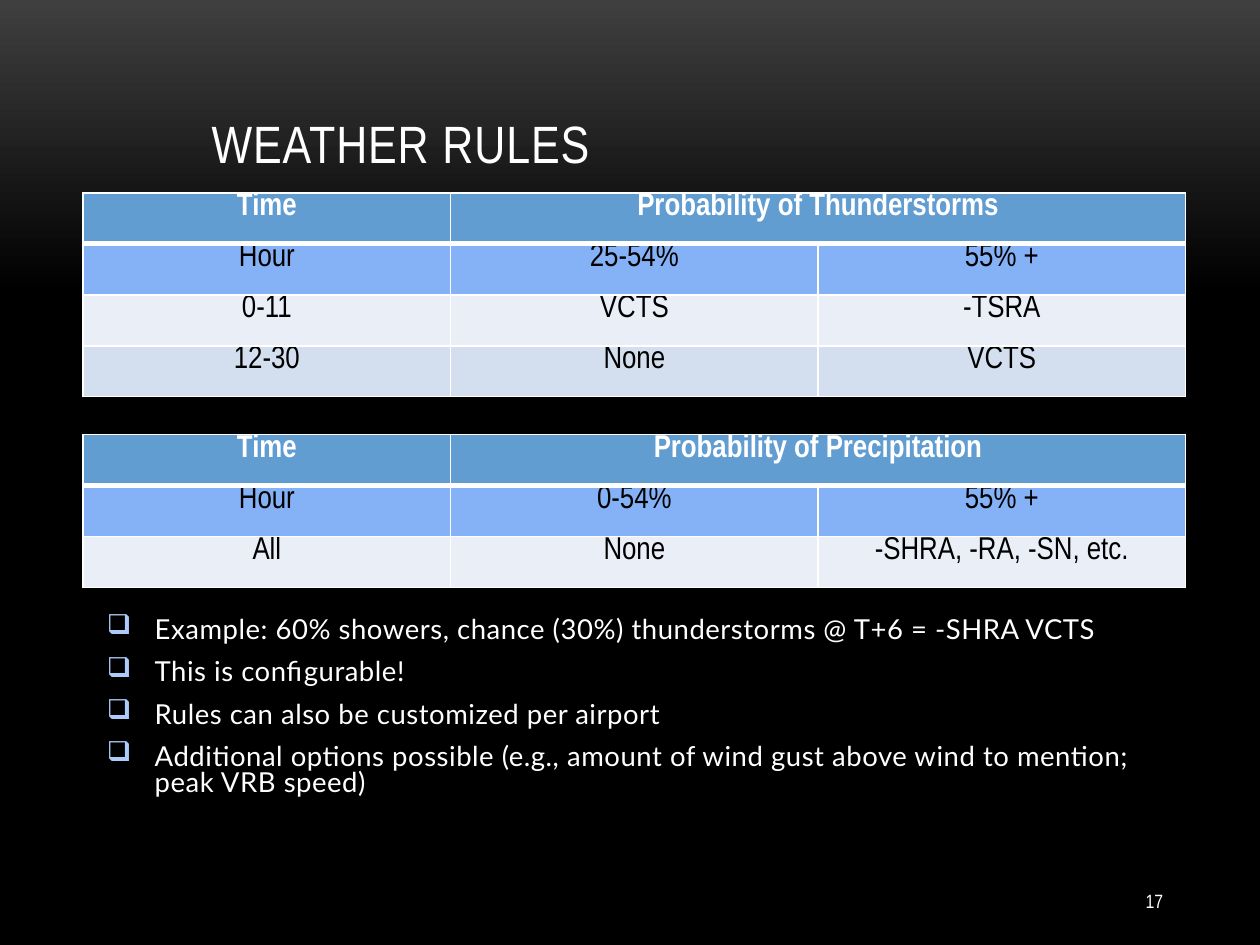
import pptx
import pptx.util
import pptx.dml.color
import pptx.enum.text
import pptx.oxml.ns
from lxml import etree

Inches = pptx.util.Inches
Pt = pptx.util.Pt
ALIGN = pptx.enum.text.PP_ALIGN
ANCHOR = pptx.enum.text.MSO_ANCHOR
FONT = "Arial Narrow"
COLORS = {
    "white": "FFFFFF", "black": "000000", "top": "3F3F3F", "head": "629DD1",
    "hour": "85B2F6", "light": "EAEFF7", "dark": "D3DFEE", "bullet": "ACCBF9",
}
BANDS = ["head", "hour", "light", "dark"]
STORMS = [
    ["Time", "Probability of Thunderstorms", ""],
    ["Hour", "25-54%", "55% +"],
    ["0-11", "VCTS", "-TSRA"],
    ["12-30", "None", "VCTS"],
]
PRECIP = [
    ["Time", "Probability of Precipitation", ""],
    ["Hour", "0-54%", "55% +"],
    ["All", "None", "-SHRA, -RA, -SN, etc."],
]
NOTES = [
    "Example: 60% showers, chance (30%) thunderstorms @ T+6 = -SHRA VCTS",
    "This is configurable!",
    "Rules can also be customized per airport",
    "Additional options possible (e.g., amount of wind gust above wind to mention; "
    "peak VRB speed)",
]


def color(name):
    return pptx.dml.color.RGBColor.from_string(COLORS[name])


def add_tag(parent, tag, **attrs):
    return etree.SubElement(parent, pptx.oxml.ns.qn(tag), attrs)


def style(para, size, font=FONT, shade="white", bold=False, gap=0):
    for run in para.runs:
        run.font.size = Pt(size)
        run.font.name = font
        run.font.bold = bold
        run.font.color.rgb = color(shade)
        if gap:
            run.font._element.set("spc", str(gap))


def set_back(slide):
    fill = slide.background.fill
    fill.gradient()
    fill.gradient_angle = 270
    for stop, place, name in zip(fill.gradient_stops, [0, 0.31], ["top", "black"]):
        stop.position = place
        stop.color.rgb = color(name)


def add_title(slide, text):
    title = slide.shapes.title
    title.left, title.top = Inches(1.58), Inches(0.18)
    title.width, title.height = Inches(7.01), Inches(1.25)
    frame = title.text_frame
    frame.text = text
    frame.auto_size = pptx.enum.text.MSO_AUTO_SIZE.NONE
    frame.vertical_anchor = ANCHOR.BOTTOM
    frame.paragraphs[0].alignment = ALIGN.LEFT
    style(frame.paragraphs[0], 30, gap=50)


def set_edges(cell, row):
    # The line under the header is thicker
    props = cell._tc.get_or_add_tcPr()
    for side in "LRTB":
        thick = (row, side) in [(0, "B"), (1, "T")]
        line = add_tag(props, "a:ln" + side, w=str(Pt(3 if thick else 1)))
        add_tag(add_tag(line, "a:solidFill"), "a:srgbClr", val=COLORS["white"])


def add_grid(slide, top, rows):
    high = 0.405
    grid = slide.shapes.add_table(
        len(rows), 3, Inches(0.66), Inches(top),
        Inches(8.75), Inches(high * len(rows))).table
    for row, texts in enumerate(rows):
        grid.rows[row].height = Inches(high)
        for col, text in enumerate(texts):
            cell = grid.cell(row, col)
            set_edges(cell, row)
            cell.fill.solid()
            cell.fill.fore_color.rgb = color(BANDS[row])
            cell.margin_top = cell.margin_bottom = 0
            cell.text_frame.text = text
            para = cell.text_frame.paragraphs[0]
            para.alignment = ALIGN.CENTER
            head = row == 0
            style(para, 18, shade="white" if head else "black", bold=head)
    grid.cell(0, 1).merge(grid.cell(0, 2))


def add_box(slide, left, top, width, height, text):
    box = slide.shapes.add_textbox(
        Inches(left), Inches(top), Inches(width), Inches(height))
    frame = box.text_frame
    frame.word_wrap = True
    frame.text = text
    return frame


def add_notes(slide, notes):
    frame = add_box(slide, 0.75, 4.86, 8.67, 1.59, "\n".join(notes))
    for num, para in enumerate(frame.paragraphs):
        para.line_spacing = 0.8
        para.space_before = Pt(3 if num else 0)
        para.space_after = Pt(6)
        props = para._p.get_or_add_pPr()
        props.set("marL", str(Inches(0.38)))
        props.set("indent", str(Inches(-0.38)))
        add_tag(add_tag(props, "a:buClr"), "a:srgbClr", val=COLORS["bullet"])
        add_tag(props, "a:buChar", char="❑")
        style(para, 15.7, font="Lato", gap=30)


def add_number(slide, text):
    frame = add_box(slide, 8.25, 6.95, 1.08, 0.4, text)
    frame.vertical_anchor = ANCHOR.MIDDLE
    frame.paragraphs[0].alignment = ALIGN.RIGHT
    style(frame.paragraphs[0], 11)


def main():
    deck = pptx.Presentation()
    deck.slide_width, deck.slide_height = Inches(10), Inches(7.5)
    slide = deck.slides.add_slide(deck.slide_layouts[5])
    set_back(slide)
    add_title(slide, "WEATHER RULES")
    # Rule tables
    add_grid(slide, 1.53, STORMS)
    add_grid(slide, 3.45, PRECIP)
    # Remarks and slide number
    add_notes(slide, NOTES)
    add_number(slide, "17")
    deck.save("out.pptx")


if __name__ == "__main__":
    main()
